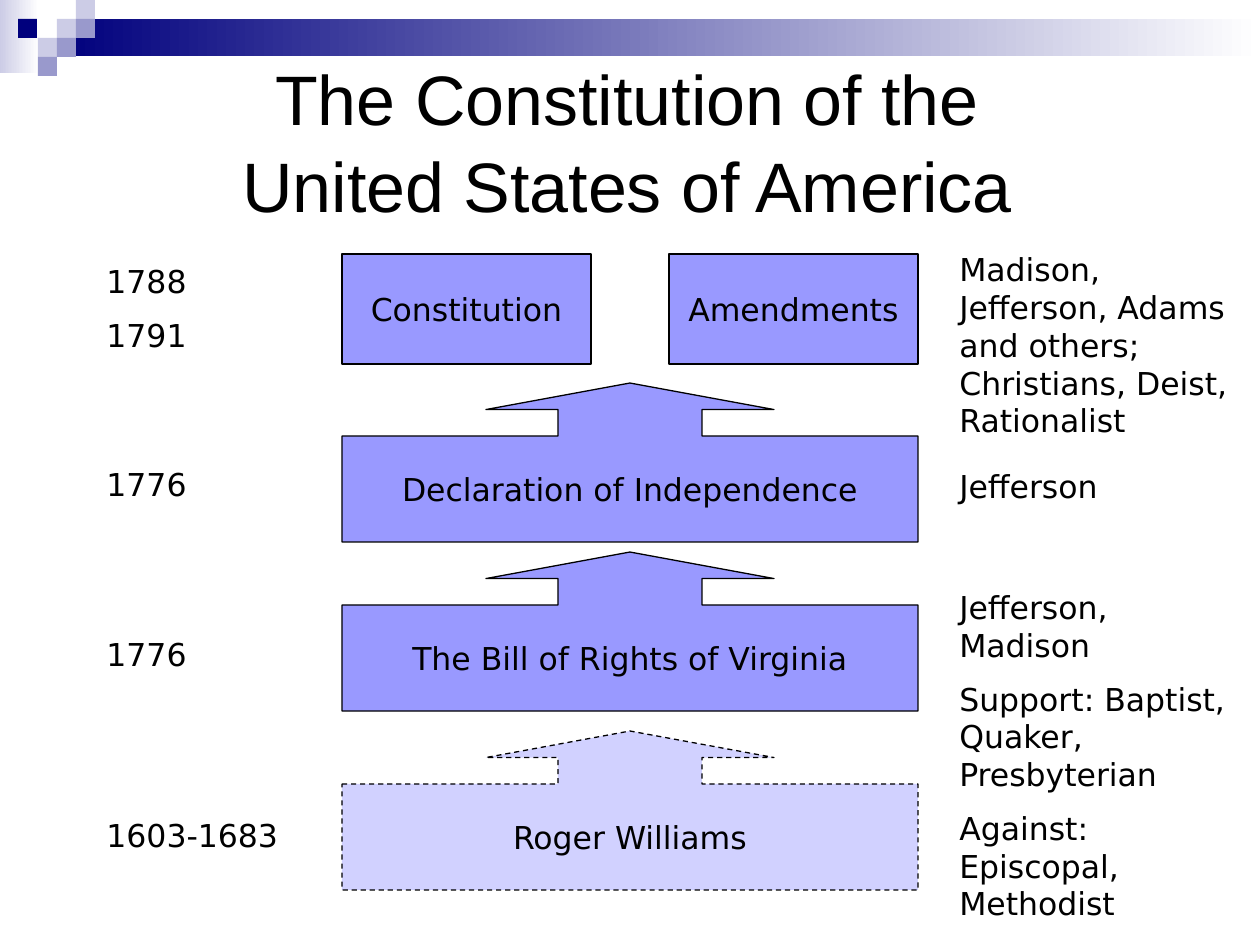
from lxml.etree import SubElement
from pptx import Presentation
from pptx.dml.color import RGBColor
from pptx.enum.dml import MSO_LINE
from pptx.enum.shapes import MSO_SHAPE as SHAPE
from pptx.enum.text import MSO_ANCHOR as ANCHOR, MSO_AUTO_SIZE as AUTO, PP_ALIGN as ALIGN
from pptx.oxml.ns import qn
from pptx.util import Emu, Pt

SCALE = 914400 / 126
BLACK = RGBColor(0x00, 0x00, 0x00)
WHITE = RGBColor(0xFF, 0xFF, 0xFF)
NAVY = RGBColor(0x00, 0x00, 0x7D)
PALE = RGBColor(0xCC, 0xCC, 0xE6)
MUTED = RGBColor(0x99, 0x99, 0xCC)
PERIWINKLE = RGBColor(0x99, 0x99, 0xFF)
BODY_FONT = "DejaVu Sans"

BANDS = [(0, 0, 39, 73, PALE), (57, 19, 1203, 37, NAVY)]
SQUARES = [(57, 19, PALE), (76, 0, PALE), (76, 19, MUTED), (38, 38, PALE),
           (18, 19, NAVY), (57, 38, MUTED), (38, 57, MUTED)]
DOCUMENTS = [(342, "Constitution"), (669, "Amendments")]
SOURCES = [(383, "Declaration of Independence"), (552, "The Bill of Rights of Virginia")]
DATES = [(256, 107, ["1788", "1791"]), (459, 50, ["1776"]),
         (629, 50, ["1776"]), (810, 50, ["1603-1683"])]
PEOPLE = [
    (244, 204, ["Madison, Jefferson, Adams and others; Christians, Deist, Rationalist"]),
    (461, 50, ["Jefferson"]),
    (582, 357, ["Jefferson, Madison", "Support: Baptist, Quaker, Presbyterian",
                "Against: Episcopal, Methodist"]),
]


def px(*lengths):
    """Turn pixel lengths into EMU."""
    return [Emu(round(length * SCALE)) for length in lengths]


def style(paragraph, size, font):
    """Format every run of a paragraph."""
    for run in paragraph.runs:
        run.font.size = Pt(size)
        run.font.name = font
        run.font.color.rgb = BLACK


def add_block(slide, preset, box, color):
    """Add a borderless filled shape."""
    block = slide.shapes.add_shape(preset, *px(*box))
    block.shadow.inherit = False
    block.fill.solid()
    block.fill.fore_color.rgb = color
    block.line.fill.background()
    return block


def add_band(slide, left, top, width, height, color):
    """Add a band that fades to white on the right."""
    band = add_block(slide, SHAPE.RECTANGLE, (left, top, width, height), color)
    band.fill.gradient()
    band.fill.gradient_angle = 0
    for stop, shade in zip(band.fill.gradient_stops, (color, WHITE)):
        stop.color.rgb = shade


def add_labelled(slide, preset, box, label):
    """Add an outlined shape with a centred label."""
    block = add_block(slide, preset, box, PERIWINKLE)
    block.line.color.rgb = BLACK
    block.line.width = Pt(0.75)
    frame = block.text_frame
    frame.text = label
    frame.word_wrap = False
    frame.vertical_anchor = ANCHOR.MIDDLE
    frame.paragraphs[0].alignment = ALIGN.CENTER
    style(frame.paragraphs[0], 18, BODY_FONT)
    return block


def add_callout(slide, top, label):
    """Add a box whose arrow points up to the next document."""
    callout = add_labelled(slide, SHAPE.UP_ARROW_CALLOUT, (342, top, 576, 159), label)
    for index, value in enumerate((0.906, 0.906, 0.167, 0.667)):
        callout.adjustments[index] = value
    return callout


def make_tentative(callout):
    """Give a callout a dashed outline and a translucent fill."""
    callout.line.dash_style = MSO_LINE.DASH
    color = callout.fill._xPr.find(qn("a:solidFill"))[0]
    SubElement(color, qn("a:alpha"), val="45000")


def add_note(slide, box, lines):
    """Add a text box with one paragraph per line."""
    frame = slide.shapes.add_textbox(*px(*box)).text_frame
    frame.text = "\n".join(lines)
    frame.word_wrap = True
    frame.auto_size = AUTO.SHAPE_TO_FIT_TEXT
    for index, paragraph in enumerate(frame.paragraphs):
        paragraph.space_before = Pt(9 if index else 0)
        style(paragraph, 18, BODY_FONT)


def set_title(slide, text):
    """Place and format the title."""
    title = slide.shapes.title
    title.left, title.top, title.width, title.height = px(60, 45, 1134, 189)
    frame = title.text_frame
    frame.text = text
    frame.auto_size = AUTO.NONE
    frame.vertical_anchor = ANCHOR.MIDDLE
    heading = frame.paragraphs[0]
    heading.alignment = ALIGN.CENTER
    heading.line_spacing = 1.04
    style(heading, 40, "Arial")


def main():
    """Build the slide and save it."""
    deck = Presentation()
    deck.slide_width, deck.slide_height = px(1260, 945)
    slide = deck.slides.add_slide(deck.slide_layouts[5])
    for band in BANDS:
        add_band(slide, *band)
    for left, top, color in SQUARES:
        add_block(slide, SHAPE.RECTANGLE, (left, top, 19, 19), color)
    set_title(slide, "The Constitution of the\vUnited States of America")
    for left, label in DOCUMENTS:
        add_labelled(slide, SHAPE.RECTANGLE, (left, 254, 249, 110), label)
    for top, label in SOURCES:
        add_callout(slide, top, label)
    make_tentative(add_callout(slide, 731, "Roger Williams"))
    for left, width, notes in ((94, 218, DATES), (947, 313, PEOPLE)):
        for top, height, lines in notes:
            add_note(slide, (left, top, width, height), lines)
    deck.save("out.pptx")


if __name__ == "__main__":
    main()
